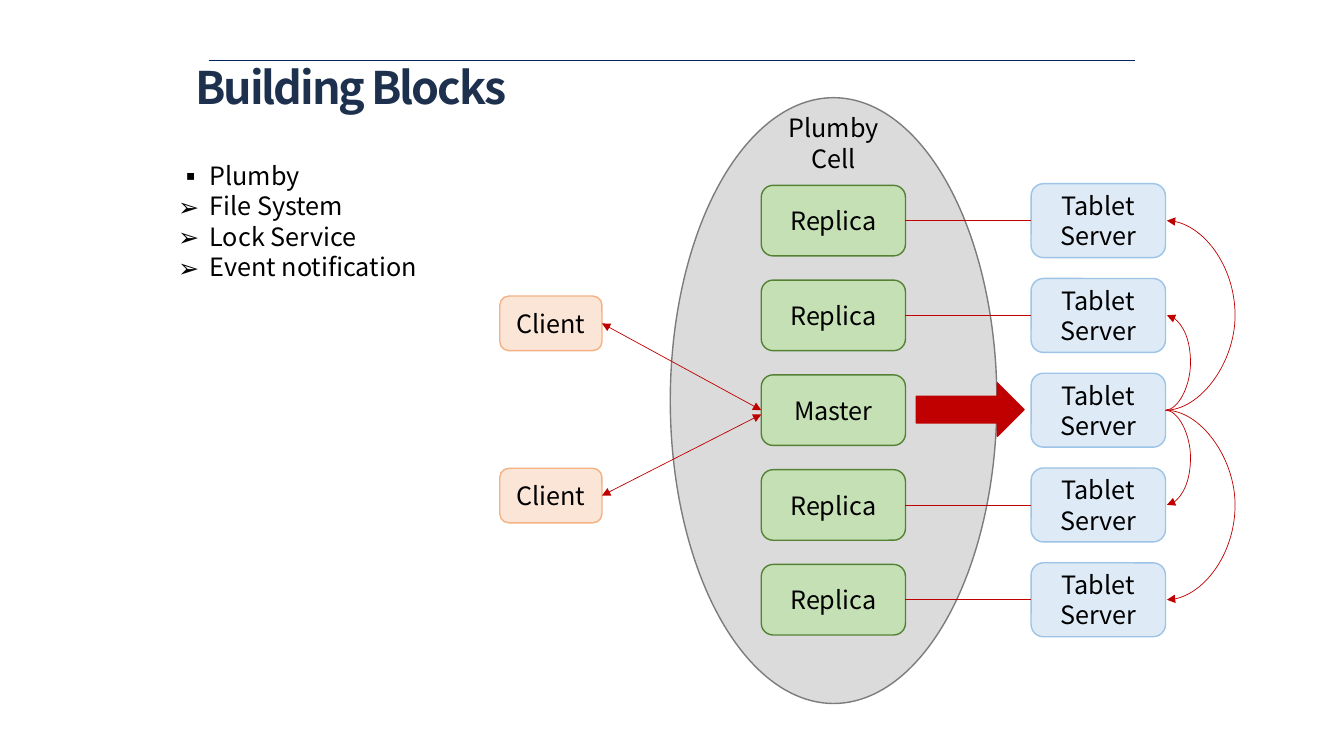
from lxml import etree
from pptx import Presentation
from pptx.dml.color import RGBColor
from pptx.enum.shapes import MSO_CONNECTOR as LINE, MSO_SHAPE as SHAPE
from pptx.enum.text import MSO_ANCHOR as ANCHOR, MSO_AUTO_SIZE as FIT, PP_ALIGN as ALIGN
from pptx.oxml.ns import qn
from pptx.util import Pt

FONT = "Noto Sans CJK KR"
RED = "C00000"
SERVICE = "Plumby"
ROWS = 5
PITCH = 67.7
MASTER_ROW = 2
LEFT, RIGHT = 1, 3


def color(fmt, hex_value):
    fmt.rgb = RGBColor.from_string(hex_value)


def add_run(p, text, size=18, hex_value="000000", bold=False):
    r = p.add_run()
    r.text = text
    r.font.name, r.font.size, r.font.bold = FONT, Pt(size), bold
    color(r.font.color, hex_value)
    return r


def add_box(s, kind, x, y, w, h, fill, line, text=None):
    sp = s.shapes.add_shape(kind, Pt(x), Pt(y), Pt(w), Pt(h))
    sp.shadow.inherit = False
    sp.fill.solid()
    color(sp.fill.fore_color, fill)
    color(sp.line.color, line)
    sp.line.width = Pt(1)
    if text:
        tf = sp.text_frame
        tf.word_wrap = True
        tf.vertical_anchor = ANCHOR.MIDDLE
        p = tf.paragraphs[0]
        p.alignment = ALIGN.CENTER
        add_run(p, text)
    return sp


def add_line(s, x1, y1, x2, y2, hex_value=RED, width=0.5, kind=LINE.STRAIGHT, heads=()):
    """Draw a connector; heads lists the ends, headEnd or tailEnd, that get an arrowhead."""
    cx = s.shapes.add_connector(kind, Pt(x1), Pt(y1), Pt(x2), Pt(y2))
    color(cx.line.color, hex_value)
    cx.line.width = Pt(width)
    for end in heads:
        etree.SubElement(cx.line._get_or_add_ln(), qn("a:" + end), type="triangle")
    etree.SubElement(cx._element.spPr, qn("a:effectLst"))
    return cx


def add_title(s, x, y, w, h):
    add_line(s, x + 9.5, y, x + 671, y, "002060", 0.25)
    sp = s.shapes.title
    sp.left, sp.top, sp.width, sp.height = Pt(x), Pt(y), Pt(w), Pt(h)
    tf = sp.text_frame
    tf.auto_size = FIT.NONE
    tf.vertical_anchor = ANCHOR.TOP
    tf.margin_left = tf.margin_right = 0
    p = tf.paragraphs[0]
    p.alignment = ALIGN.LEFT
    p.line_spacing = 0.9
    r = add_run(p, "Building Blocks", 32, "1D314E", True)
    r.font._element.set("spc", "-150")


def add_bullets(s, x, y, w, h):
    tf = s.shapes.add_textbox(Pt(x), Pt(y), Pt(w), Pt(h)).text_frame
    tf.word_wrap = True
    items = [("▪", SERVICE), ("➢", "File System"), ("➢", "Lock Service"),
             ("➢", "Event notification")]
    for i, (bullet, text) in enumerate(items):
        p = tf.add_paragraph() if i else tf.paragraphs[0]
        pPr = p._p.get_or_add_pPr()
        pPr.set("marL", str(Pt(22.5)))
        pPr.set("indent", str(-Pt(22.5)))
        etree.SubElement(pPr, qn("a:buFont"), typeface=FONT)
        etree.SubElement(pPr, qn("a:buChar"), char=bullet)
        add_run(p, text)


def add_cell(s, x, y, w, h):
    """Draw the lock service cell and return its replicas from top to bottom."""
    add_box(s, SHAPE.OVAL, x, y, w, h, "DBDBDB", "7C7C7C")
    tf = s.shapes.add_textbox(Pt(x + 66), Pt(y + 7.2), Pt(w - 132), Pt(51)).text_frame
    tf.word_wrap = True
    for i, text in enumerate([SERVICE, "Cell"]):
        p = tf.add_paragraph() if i else tf.paragraphs[0]
        p.alignment = ALIGN.CENTER
        add_run(p, text)
    return [add_box(s, SHAPE.ROUNDED_RECTANGLE, x + 65, y + 62.6 + PITCH * i, 103, 50.4,
                    "C5E0B4", "548235", "Master" if i == MASTER_ROW else "Replica")
            for i in range(ROWS)]


def add_clients(s, x, y, w, h, master):
    middle = master.top.pt + master.height.pt / 2
    for top, drop in [(y, 0), (y + 123, 3)]:
        client = add_box(s, SHAPE.ROUNDED_RECTANGLE, x, top, w, h,
                         "FBE5D6", "F4B183", "Client")
        cx = add_line(s, x + w, top + h / 2, master.left.pt, middle + drop,
                      heads=("headEnd", "tailEnd"))
        cx.begin_connect(client, RIGHT)
        if not drop:
            cx.end_connect(master, LEFT)


def add_tablets(s, x, y, w, h, replicas):
    """Draw the tablet servers, their links to the replicas and the curves among them."""
    middles = [y + h / 2 + PITCH * i for i in range(ROWS)]
    hub = middles[MASTER_ROW]
    for i, (replica, middle) in enumerate(zip(replicas, middles)):
        tablet = add_box(s, SHAPE.ROUNDED_RECTANGLE, x, middle - h / 2, w, h,
                         "DEEBF7", "9DC3E6", "Tablet Server")
        if i == MASTER_ROW:
            add_box(s, SHAPE.RIGHT_ARROW, x - 82, hub - 19.5, 77, 38.2, RED, RED)
            continue
        cx = add_line(s, replica.left.pt + replica.width.pt, middle, x, middle)
        cx.begin_connect(replica, RIGHT)
        cx.end_connect(tablet, LEFT)
        curve = add_line(s, x + w, hub, x + w + 1, middle, kind=LINE.CURVE,
                         heads=("tailEnd",))
        bulge = 18 if abs(i - MASTER_ROW) == 1 else 50.11
        guides = curve._element.spPr.find(qn("a:prstGeom")).get_or_add_avLst()
        etree.SubElement(guides, qn("a:gd"), name="adj1", fmla=f"val {round(bulge * 100000)}")


def main():
    prs = Presentation()
    prs.slide_width, prs.slide_height = Pt(960), Pt(540)
    s = prs.slides.add_slide(prs.slide_layouts[5])
    add_title(s, 139.5, 43.2, 668, 67.7)
    add_bullets(s, 120.2, 111, 199, 94)
    replicas = add_cell(s, 478.8, 69.8, 233.3, 432.7)
    add_clients(s, 357, 211.5, 73, 39, replicas[MASTER_ROW])
    add_tablets(s, 736.5, 131.2, 96, 52.8, replicas)
    prs.save("out.pptx")


if __name__ == "__main__":
    main()
